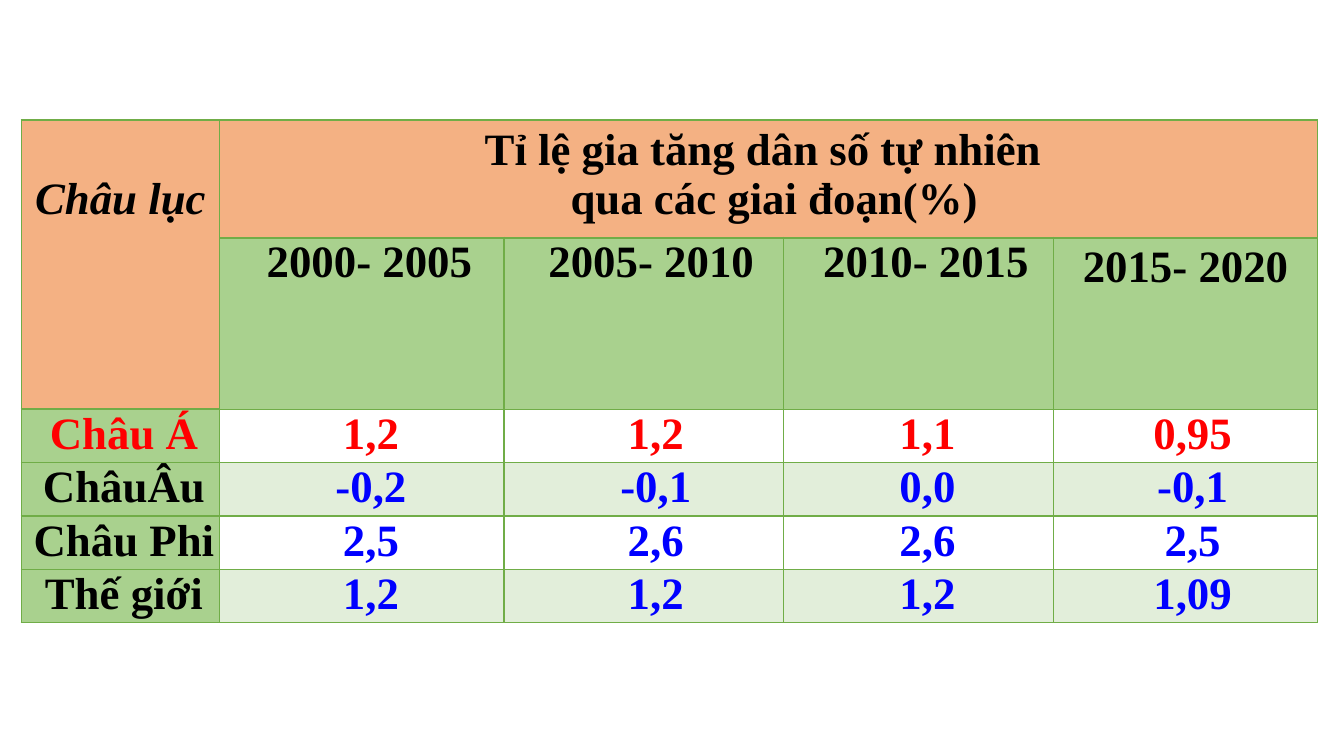
from lxml.etree import SubElement
from pptx import Presentation
from pptx.dml.color import RGBColor
from pptx.enum.text import PP_ALIGN
from pptx.oxml.ns import qn
from pptx.util import Inches, Pt

COLORS = {
    "heading": "F4B183",
    "label": "A9D18E",
    "green": "70AD47",
    "black": "000000",
    "red": "FF0000",
    "blue": "0000FF",
}
COLUMN_WIDTHS = [1.97, 2.82, 2.77, 2.68, 2.62]
ROW_HEIGHTS = [1.17, 1.7] + [0.53] * 4
BODY_INDENTS = [0.07, 0.18, 0.24, 0.18, 0.14]
TITLE_LINES = ["Tỉ lệ gia tăng dân số tự nhiên ", " qua các giai đoạn(%)"]
PERIODS = ["2000- 2005", "2005- 2010", "2010- 2015", "2015- 2020"]
GROWTH_RATES = [
    ["Châu Á", "1,2", "1,2", "1,1", "0,95"],
    ["ChâuÂu", "-0,2", "-0,1", "0,0", "-0,1"],
    ["Châu Phi", "2,5", "2,6", "2,6", "2,5"],
    ["Thế giới", "1,2", "1,2", "1,2", "1,09"],
]


def write_cell(cell, lines, color="black", indent=None, italic=False):
    """Write centred bold lines; an indent also removes the cell's insets."""
    if indent is not None:
        cell.margin_left = cell.margin_right = 0
        cell.margin_top = cell.margin_bottom = 0
    for number, line in enumerate(lines):
        frame = cell.text_frame
        paragraph = frame.add_paragraph() if number else frame.paragraphs[0]
        paragraph.alignment = PP_ALIGN.CENTER
        if indent is not None:
            paragraph.space_before = Pt(9.9)
            properties = paragraph._p.get_or_add_pPr()
            properties.set("marL", str(Inches(indent)))
            properties.set("indent", "0")
        run = paragraph.add_run()
        run.text = line
        run.font.name = "Times New Roman"
        run.font.size = Pt(32)
        run.font.bold = True
        run.font.italic = italic
        run.font.color.rgb = RGBColor.from_string(COLORS[color])


def style_cell(cell, fill, opacity=100, bottom_width=1):
    """Draw the green borders and the fill; a fill of None leaves it clear."""
    properties = cell._tc.get_or_add_tcPr()
    for side in ("L", "R", "T", "B"):
        border = SubElement(properties, qn(f"a:ln{side}"))
        border.set("w", str(Pt(bottom_width if side == "B" else 1)))
        line_fill = SubElement(border, qn("a:solidFill"))
        SubElement(line_fill, qn("a:srgbClr")).set("val", COLORS["green"])
    if fill is None:
        cell.fill.background()
        return
    cell.fill.solid()
    cell.fill.fore_color.rgb = RGBColor.from_string(COLORS[fill])
    if opacity < 100:
        tint = properties.find(f"{qn('a:solidFill')}/{qn('a:srgbClr')}")
        SubElement(tint, qn("a:alpha")).set("val", str(opacity * 1000))


presentation = Presentation()
presentation.slide_width = Inches(13.33)
presentation.slide_height = Inches(7.5)
slide = presentation.slides.add_slide(presentation.slide_layouts[6])

growth_table = slide.shapes.add_table(
    len(ROW_HEIGHTS), len(COLUMN_WIDTHS), Inches(0.21), Inches(1.19),
    Inches(sum(COLUMN_WIDTHS)), Inches(sum(ROW_HEIGHTS))
).table
growth_table.first_row = False
growth_table.horz_banding = False
for column, width in zip(growth_table.columns, COLUMN_WIDTHS):
    column.width = Inches(width)
for row, height in zip(growth_table.rows, ROW_HEIGHTS):
    row.height = Inches(height)

# Headings
continent_heading = growth_table.cell(0, 0)
continent_heading.merge(growth_table.cell(1, 0))
continent_heading.margin_top = Inches(0.54)
write_cell(continent_heading, ["Châu lục"], italic=True)
title = growth_table.cell(0, 1)
title.merge(growth_table.cell(0, 4))
write_cell(title, TITLE_LINES)
for column in range(len(COLUMN_WIDTHS)):
    style_cell(growth_table.cell(0, column), "heading", bottom_width=2)
style_cell(growth_table.cell(1, 0), "heading", bottom_width=2)

for column, period in enumerate(PERIODS, start=1):
    period_cell = growth_table.cell(1, column)
    write_cell(period_cell, [period], indent=0.15 if column < 4 else None)
    style_cell(period_cell, "label")

# Growth rates by continent
for row, rates in enumerate(GROWTH_RATES):
    for column, value in enumerate(rates):
        rate_cell = growth_table.cell(row + 2, column)
        if row == 0:
            color = "red"
        else:
            color = "blue" if column else "black"
        write_cell(rate_cell, [value], color, BODY_INDENTS[column])
        if column == 0:
            style_cell(rate_cell, "label")
        elif row % 2:
            style_cell(rate_cell, "green", opacity=20)
        else:
            style_cell(rate_cell, None)

presentation.save("out.pptx")
